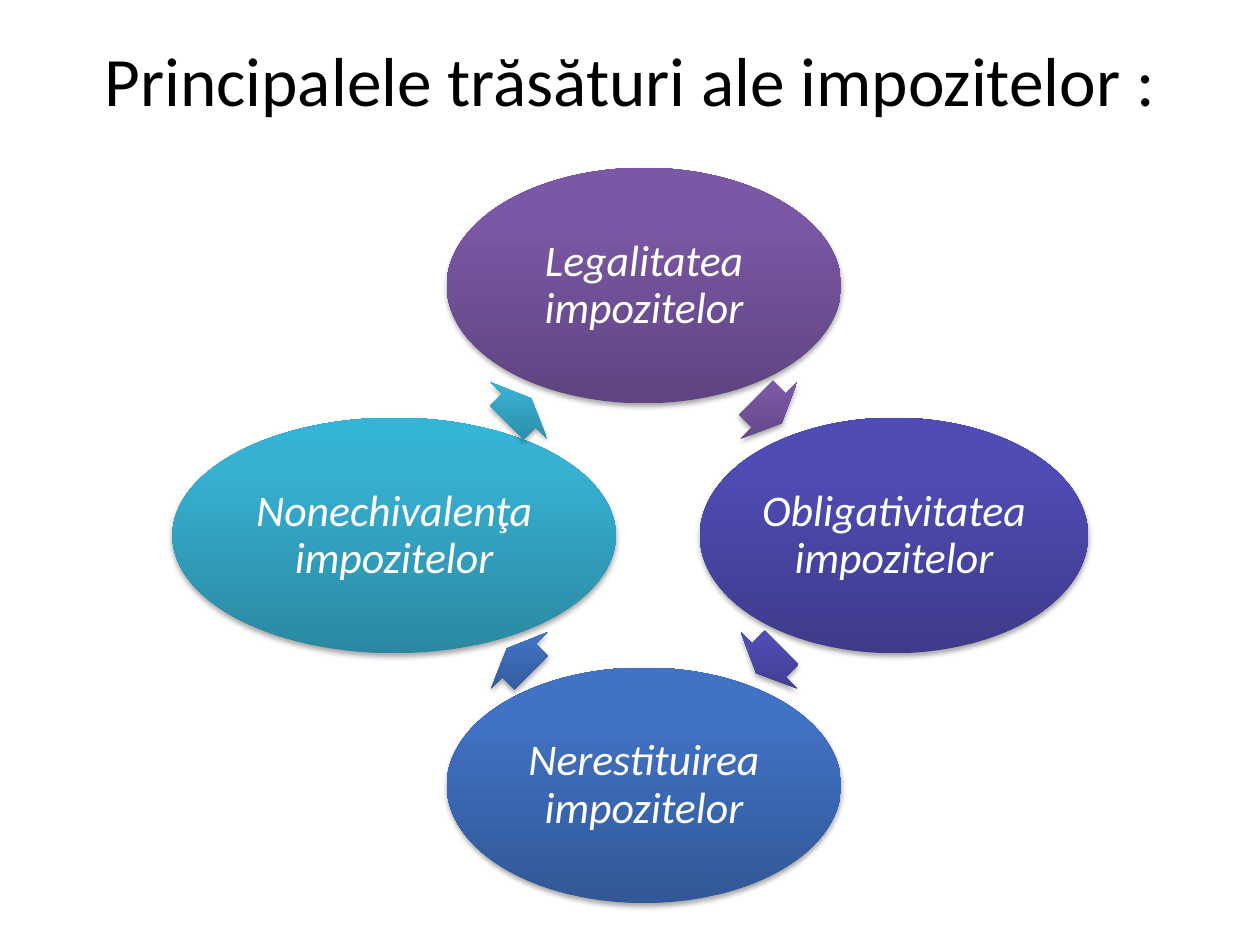
from math import cos, radians, sin

from pptx import Presentation
from pptx.dml.color import RGBColor
from pptx.enum.shapes import MSO_SHAPE
from pptx.enum.text import MSO_ANCHOR, PP_ALIGN
from pptx.oxml import parse_xml
from pptx.oxml.ns import nsdecls
from pptx.util import Pt

COLORS = {
    "text": "000000",
    "light": "FFFFFF",
    "shade": "000000",
    # Gradient stops, from bottom to top
    "purple": ("5F4480", "7B58A6", "7C57A8"),
    "indigo": ("3E3B8B", "504CB5", "4F4BB8"),
    "blue": ("325897", "4172C4", "3F72C7"),
    "teal": ("2A88A2", "37B1D2", "34B4D6"),
}


class Board:
    font = "Calibri"

    def __init__(self, slide):
        self.slide = slide

    def style(self, para, size, color, italic=False):
        para.alignment = PP_ALIGN.CENTER
        for run in para.runs:
            font = run.font
            font.name, font.size, font.italic = self.font, Pt(size), italic
            font.color.rgb = RGBColor.from_string(COLORS[color])

    def title(self, text, left, top, width, height):
        box = self.slide.shapes.title
        box.left, box.top = Pt(left), Pt(top)
        box.width, box.height = Pt(width), Pt(height)
        frame = box.text_frame
        frame.text = text
        frame.vertical_anchor = MSO_ANCHOR.MIDDLE
        self.style(frame.paragraphs[0], 39.6, "text")

    def shape(self, kind, x, y, width, height, color):
        """Add a shaded shape centred on x, y."""
        item = self.slide.shapes.add_shape(
            kind, Pt(x - width / 2), Pt(y - height / 2), Pt(width), Pt(height))
        item.line.fill.background()
        item.shadow.inherit = False
        props = item.element.spPr
        # Upright gradient, whatever the turn of the shape
        stops = "".join(
            f'<a:gs pos="{pos}000"><a:srgbClr val="{tone}"/></a:gs>'
            for pos, tone in zip((0, 80, 100), COLORS[color]))
        props.prstGeom.addnext(parse_xml(
            f'<a:gradFill {nsdecls("a")} rotWithShape="0"><a:gsLst>{stops}'
            '</a:gsLst><a:lin ang="16200000" scaled="0"/></a:gradFill>'))
        # Soft shadow below
        props.find("{*}effectLst").append(parse_xml(
            f'<a:outerShdw {nsdecls("a")} blurRad="{Pt(3.1)}" dist="{Pt(1.8)}" '
            f'dir="5400000" rotWithShape="0"><a:srgbClr val="{COLORS["shade"]}">'
            '<a:alpha val="35000"/></a:srgbClr></a:outerShdw>'))
        return item

    def oval(self, text, x, y, width, height, color):
        item = self.shape(MSO_SHAPE.OVAL, x, y, width, height, color)
        frame = item.text_frame
        frame.text = text
        frame.word_wrap = True
        frame.vertical_anchor = MSO_ANCHOR.MIDDLE
        frame.margin_left = frame.margin_right = Pt(2.5)
        frame.margin_top = frame.margin_bottom = Pt(2.5)
        para = frame.paragraphs[0]
        para.line_spacing = 0.9
        self.style(para, 25, "light", italic=True)

    def arrow(self, x, y, width, height, turn, color):
        item = self.shape(MSO_SHAPE.RIGHT_ARROW, x, y, width, height, color)
        item.adjustments[0], item.adjustments[1] = 0.6, 0.5
        item.rotation = turn


def main():
    deck = Presentation()
    deck.slide_width, deck.slide_height = Pt(720), Pt(540)
    board = Board(deck.slides.add_slide(deck.slide_layouts[5]))
    board.title("Principalele trăsături ale impozitelor :", 36, 0, 648, 90)

    # Cycle of traits, clockwise from the top: text, oval width, arrow width
    traits = [
        ("Legalitatea impozitelor", 225.4, 20.6, "purple"),
        ("Obligativitatea impozitelor", 221.8, 20.6, "indigo"),
        ("Nerestituirea impozitelor", 225.4, 19.6, "blue"),
        ("Nonechivalenţa impozitelor", 253.4, 19.6, "teal"),
    ]
    mid_x, mid_y, radius = 368, 306, 142.8
    step = 360 / len(traits)
    reach = radius * cos(radians(step / 2))  # arrows sit halfway between ovals

    def spot(angle, dist):
        turn = radians(angle)
        return mid_x + dist * sin(turn), mid_y - dist * cos(turn)

    for i, (text, width, size, color) in enumerate(traits):
        angle = i * step
        board.oval(text, *spot(angle, radius), width, 134.6, color)
        half = angle + step / 2
        board.arrow(*spot(half, reach), size, 45.4, half, color)

    deck.save("out.pptx")


if __name__ == "__main__":
    main()
